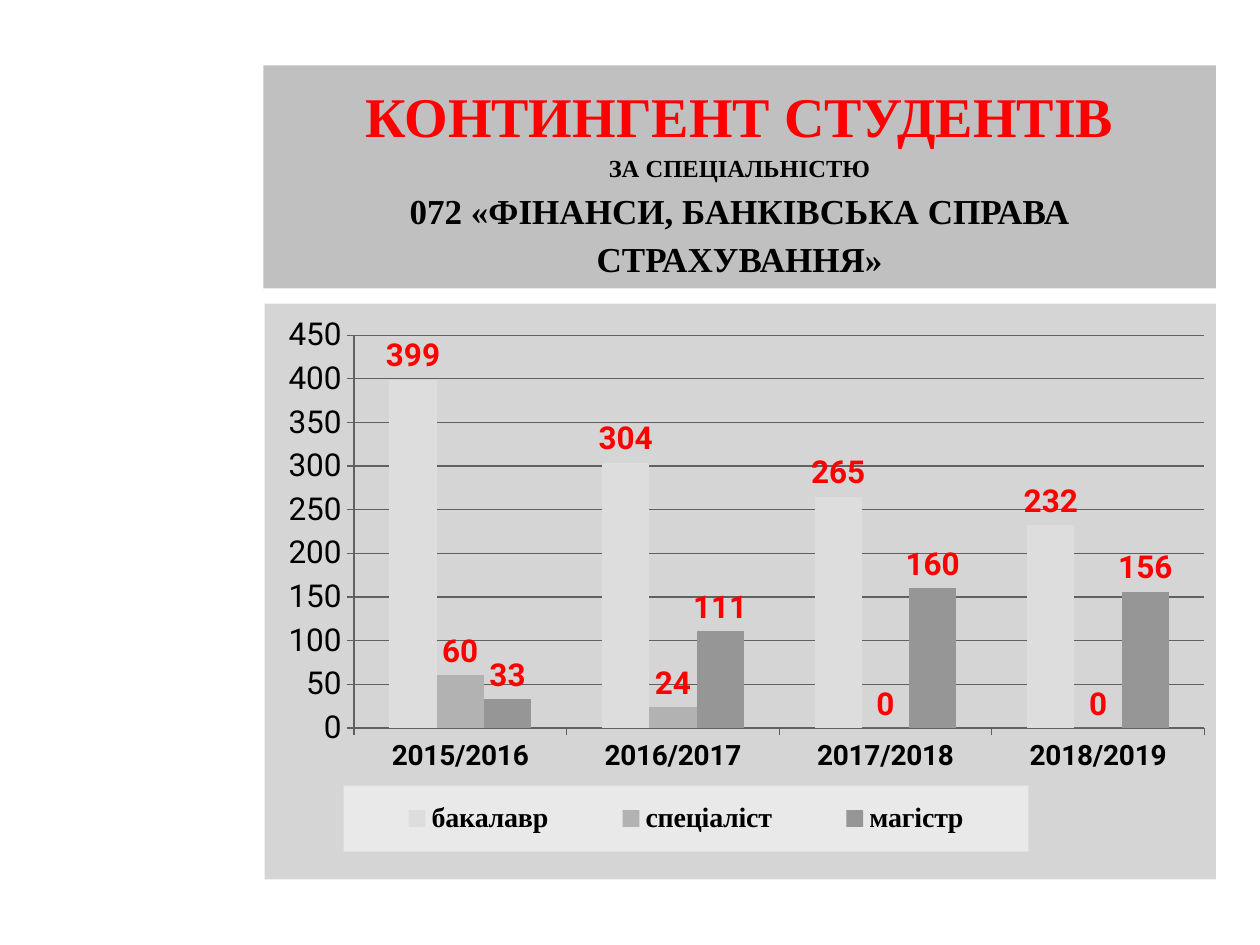
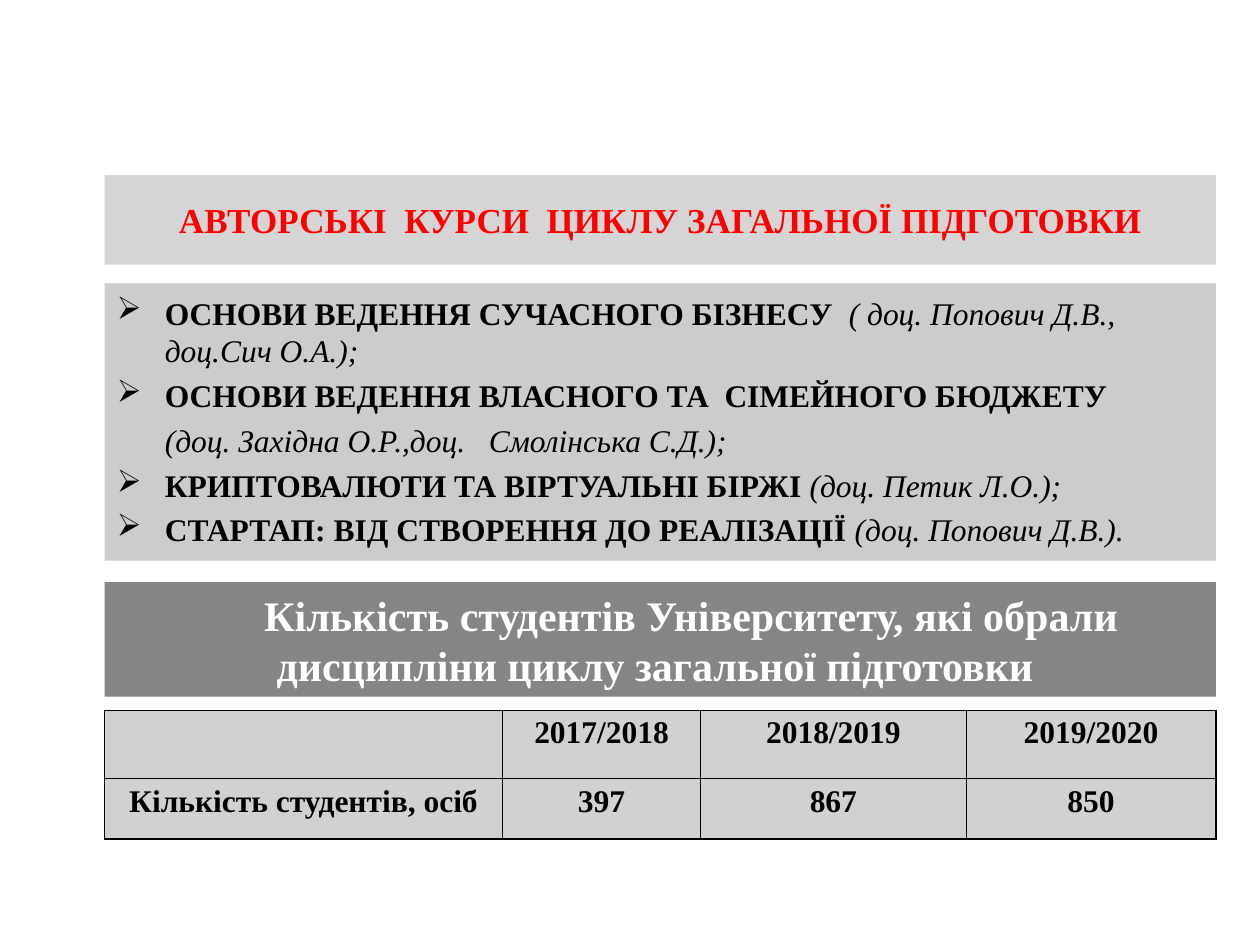
from pptx import Presentation
from pptx.chart.data import CategoryChartData
from pptx.dml.color import RGBColor
from pptx.enum.chart import XL_CHART_TYPE, XL_LABEL_POSITION, XL_LEGEND_POSITION, XL_TICK_MARK
from pptx.enum.shapes import MSO_SHAPE
from pptx.enum.text import MSO_ANCHOR, PP_ALIGN
from pptx.oxml import parse_xml
from pptx.oxml.ns import nsdecls, qn
from pptx.util import Pt

SCALE = 9144  # EMU in one px, 100 px to the inch
SERIF, SANS = "Times New Roman", "Roboto"
BLACK = RGBColor(0x00, 0x00, 0x00)
WHITE = RGBColor(0xFF, 0xFF, 0xFF)
RED = RGBColor(0xFF, 0x00, 0x00)
AXIS = RGBColor(0x60, 0x60, 0x60)
SILVER = RGBColor(0xC0, 0xC0, 0xC0)
PALE = RGBColor(0xD5, 0xD5, 0xD5)
LIST = RGBColor(0xCC, 0xCC, 0xCC)
DARK = RGBColor(0x85, 0x85, 0x85)
CELL = RGBColor(0xD1, 0xD1, 0xD1)
KEY = RGBColor(0xE9, 0xE9, 0xE9)

RIGHT = 965  # right edge of every block
LEFT = 83    # left edge on the courses slide
HANG = 38    # bullet indent

YEARS = ["2015/2016", "2016/2017", "2017/2018", "2018/2019"]
LEVELS = [
    ("бакалавр", [399, 304, 265, 232], RGBColor(0xDD, 0xDD, 0xDD)),
    ("спеціаліст", [60, 24, 0, 0], RGBColor(0xB2, 0xB2, 0xB2)),
    ("магістр", [33, 111, 160, 156], RGBColor(0x96, 0x96, 0x96)),
]
# course, teachers, whether the teachers take a line of their own
COURSES = [
    ("ОСНОВИ ВЕДЕННЯ СУЧАСНОГО БІЗНЕСУ  ", "( доц. Попович Д.В., доц.Сич О.А.);", False),
    ("ОСНОВИ ВЕДЕННЯ ВЛАСНОГО ТА  СІМЕЙНОГО БЮДЖЕТУ",
     "(доц. Західна О.Р.,доц.   Смолінська С.Д.);", True),
    ("КРИПТОВАЛЮТИ ТА ВІРТУАЛЬНІ БІРЖІ ", "(доц. Петик Л.О.);", False),
    ("СТАРТАП: ВІД СТВОРЕННЯ ДО РЕАЛІЗАЦІЇ ", "(доц. Попович Д.В.).", False),
]
COUNTS = [
    ["", "2017/2018", "2018/2019", "2019/2020"],
    ["Кількість студентів, осіб", "397", "867", "850"],
]


def px(*sizes):
    return [size * SCALE for size in sizes]


def style(font, size, color=BLACK, bold=True, italic=False, name=SERIF):
    font.name, font.size = name, Pt(size)
    font.bold, font.italic = bold, italic
    font.color.rgb = color


def write(frame, text, note="", size=18, color=BLACK, bold=True, italic=False,
          align=PP_ALIGN.CENTER, line=None, margin=0, first=0, bullet=None, gap=4):
    """Add one paragraph; note follows the text in plain italics."""
    para = frame.paragraphs[0]
    if para.runs:
        para = frame.add_paragraph()
        para.space_before = Pt(gap)
    para.alignment, para.line_spacing = align, line
    props = para._p.get_or_add_pPr()
    props.set("marL", str(margin * SCALE))
    props.set("indent", str(first * SCALE))
    if bullet:
        props.append(parse_xml(f'<a:buChar {nsdecls("a")} char="{bullet}"/>'))
    run = para.add_run()
    run.text = text
    style(run.font, size, color, bold, italic)
    if note:
        run = para.add_run()
        run.text = note
        style(run.font, size, color, False, True)


def band(slide, left, top, height, fill, anchor=MSO_ANCHOR.MIDDLE):
    """Draw a filled bar that reaches the right edge; return its text frame."""
    shape = slide.shapes.add_shape(MSO_SHAPE.RECTANGLE, *px(left, top, RIGHT - left, height))
    shape.shadow.inherit = False
    shape.fill.solid()
    shape.fill.fore_color.rgb = fill
    shape.line.fill.background()
    frame = shape.text_frame
    frame.word_wrap = True
    frame.vertical_anchor = anchor
    return frame


def place(node, index, x, y, w, h, inner=False):
    """Fix the layout of a chart part, in fractions of the chart."""
    for old in node.findall(qn("c:layout")):
        node.remove(old)
    target = '<c:layoutTarget val="inner"/>' if inner else ""
    modes = '<c:xMode val="edge"/><c:yMode val="edge"/>'
    sizes = "".join(f'<c:{key} val="{val}"/>' for key, val in zip("xywh", (x, y, w, h)))
    node.insert(index, parse_xml(
        f'<c:layout {nsdecls("c")}><c:manualLayout>{target}{modes}{sizes}'
        "</c:manualLayout></c:layout>"))


def paint(node, color):
    """Fill a chart part that already has its font set."""
    node.find(qn("c:txPr")).addprevious(parse_xml(
        f'<c:spPr {nsdecls("c", "a")}><a:solidFill><a:srgbClr val="{color}"/></a:solidFill>'
        "<a:ln><a:noFill/></a:ln></c:spPr>"))


def add_bars(slide, left, top, width, height):
    data = CategoryChartData()
    data.categories = YEARS
    for name, vals, _ in LEVELS:
        data.add_series(name, vals)
    chart = slide.shapes.add_chart(
        XL_CHART_TYPE.COLUMN_CLUSTERED, *px(left, top, width, height), data).chart
    chart.has_title = False
    style(chart.font, 18, bold=False, name=SANS)
    paint(chart._chartSpace, PALE)

    plot = chart.plots[0]
    plot.gap_width, plot.overlap, plot.vary_by_categories = 150, 0, False
    for series, (_, _, color) in zip(plot.series, LEVELS):
        series.format.fill.solid()
        series.format.fill.fore_color.rgb = color
        labels = series.data_labels
        labels.show_value = True
        labels.position = XL_LABEL_POSITION.OUTSIDE_END
        style(labels.font, 18, RED, name=SANS)

    years, scale = chart.category_axis, chart.value_axis
    scale.minimum_scale, scale.maximum_scale, scale.major_unit = 0, 450, 50
    scale.has_major_gridlines = True
    for axis in (years, scale):
        axis.major_tick_mark = XL_TICK_MARK.OUTSIDE
    for part in (years, scale, scale.major_gridlines):
        part.format.line.color.rgb = AXIS
        part.format.line.width = Pt(0.75)
    style(years.tick_labels.font, 16, name=SANS)
    style(scale.tick_labels.font, 18, bold=False, name=SANS)

    chart.has_legend = True
    legend = chart.legend
    legend.position = XL_LEGEND_POSITION.BOTTOM
    legend.include_in_layout = False
    style(legend.font, 16)
    paint(legend._element, KEY)
    place(legend._element, 1, 0.083, 0.837, 0.72, 0.115)
    place(chart._chartSpace.chart.plotArea, 0, 0.094, 0.055, 0.894, 0.682, inner=True)


def edge(cell, color=BLACK):
    props = cell._tc.get_or_add_tcPr()
    for spot, side in enumerate("LRTB"):
        props.insert(spot, parse_xml(
            f'<a:ln{side} {nsdecls("a")} w="{Pt(1)}"><a:solidFill>'
            f'<a:srgbClr val="{color}"/></a:solidFill></a:ln{side}>'))


def add_grid(slide, left, top, cols, rows):
    table = slide.shapes.add_table(
        len(rows), len(cols), *px(left, top, sum(cols), sum(rows))).table
    for col, width in zip(table.columns, cols):
        col.width = width * SCALE
    for row, height, texts in zip(table.rows, rows, COUNTS):
        row.height = height * SCALE
        for cell, text in zip(row.cells, texts):
            cell.fill.solid()
            cell.fill.fore_color.rgb = CELL
            cell.margin_left, cell.margin_right = px(7, 7)
            cell.margin_top = cell.margin_bottom = 0
            edge(cell)
            if text:
                write(cell.text_frame, text, line=1.15)


def students(slide):
    head = band(slide, 209, 52, 177, SILVER, MSO_ANCHOR.TOP)
    for text, size, color in [
        ("КОНТИНГЕНТ СТУДЕНТІВ", 32, RED),
        ("ЗА СПЕЦІАЛЬНІСТЮ", 14, BLACK),
        ("072 «ФІНАНСИ, БАНКІВСЬКА СПРАВА СТРАХУВАННЯ»", 20, BLACK),
    ]:
        write(head, text, size=size, color=color, line=1.15, gap=0)
    add_bars(slide, 210, 241, 755, 457)


def courses(slide):
    write(band(slide, LEFT, 139, 71, PALE),
          "АВТОРСЬКІ  КУРСИ  ЦИКЛУ ЗАГАЛЬНОЇ ПІДГОТОВКИ", size=20, color=RED)

    body = band(slide, LEFT, 225, 220, LIST, MSO_ANCHOR.TOP)
    body.margin_top = 8 * SCALE
    for name, staff, split in COURSES:
        write(body, name, "" if split else staff, align=PP_ALIGN.LEFT,
              margin=HANG, first=-HANG, bullet="➢")
        if split:
            write(body, staff, bold=False, italic=True, align=PP_ALIGN.LEFT, margin=HANG)

    write(band(slide, LEFT, 462, 91, DARK),
          "Кількість студентів Університету, які обрали дисципліни циклу загальної підготовки ",
          size=24, color=WHITE, first=49)
    add_grid(slide, LEFT, 564, [316, 157, 211, 198], [54, 48])


def main():
    deck = Presentation()
    deck.slide_width, deck.slide_height = px(1000, 750)
    for build in (students, courses):
        build(deck.slides.add_slide(deck.slide_layouts[6]))
    deck.save("out.pptx")


if __name__ == "__main__":
    main()
